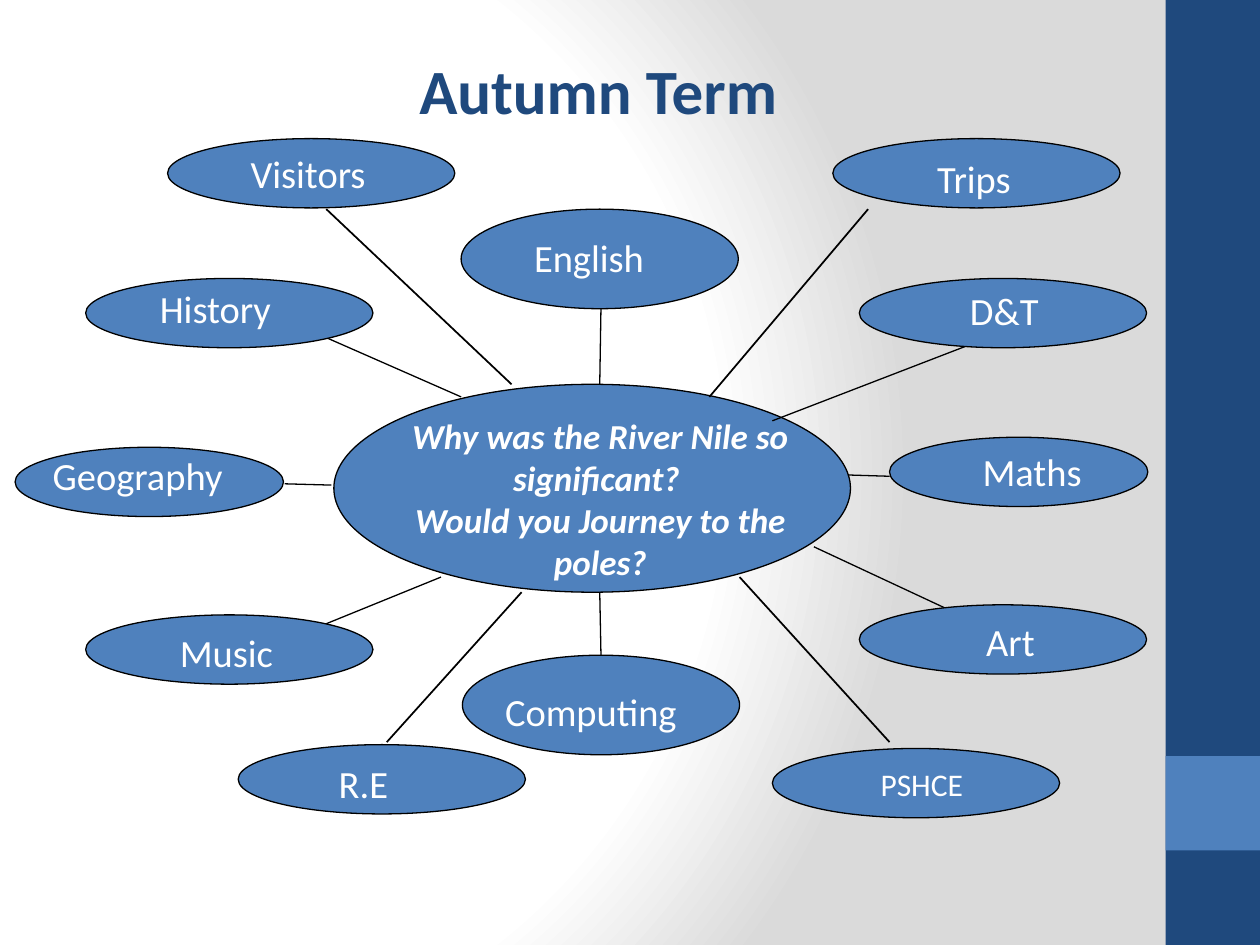
from lxml import etree
from pptx import Presentation
from pptx.dml.color import RGBColor
from pptx.enum.shapes import MSO_CONNECTOR, MSO_SHAPE
from pptx.enum.text import MSO_AUTO_SIZE, PP_ALIGN
from pptx.oxml import parse_xml
from pptx.oxml.ns import nsdecls, qn
from pptx.util import Inches, Pt

OVAL, RECT = MSO_SHAPE.OVAL, MSO_SHAPE.RECTANGLE
STRAIGHT = MSO_CONNECTOR.STRAIGHT
GROW = MSO_AUTO_SIZE.SHAPE_TO_FIT_TEXT
LEFT, MID = PP_ALIGN.LEFT, PP_ALIGN.CENTER

FONT = "Calibri"
COLORS = {"navy": "1F497D", "blue": "4F81BD", "white": "FFFFFF",
          "grey": "DADADA", "black": "000000"}

# Content: boxes are left, top, width, height in inches
TITLE = ["Autumn Term "]
THEME = ["Why was the River Nile so significant? ",
         "Would you Journey to the poles?"]
WIDE = (2.28, 0.55)
TALL = (2.2, 0.79)

# Subject, oval corner, oval size, label box, wrap, alignment, text size
TOPICS = [
    ("Visitors", (1.33, 1.1), WIDE, (1.89, 1.14, 1.12, 0.47), False, LEFT, 22),
    ("Trips", (6.61, 1.1), WIDE, (7.27, 1.18, 0.92, 0.47), True, MID, 22),
    ("English", (3.66, 1.66), TALL, (4.14, 1.81, 1.08, 0.47), False, LEFT, 22),
    ("History", (0.68, 2.21), WIDE, (1.17, 2.21, 1.5, 0.47), True, LEFT, 22),
    ("D&T", (6.82, 2.21), WIDE, (7.6, 2.23, 1.5, 0.47), True, LEFT, 22),
    ("Geography", (0.12, 3.55), (2.13, 0.55), (0.32, 3.54, 1.56, 0.47), False, LEFT, 22),
    ("Maths", (7.06, 3.47), (2.05, 0.55), (7.7, 3.51, 0.99, 0.47), False, LEFT, 22),
    (" Music", (0.68, 4.88), WIDE, (1.26, 4.94, 1.5, 0.47), True, LEFT, 22),
    ("Art", (6.82, 4.8), WIDE, (7.27, 4.86, 1.5, 0.47), True, MID, 22),
    ("Computing", (3.67, 5.2), TALL, (3.91, 5.41, 1.58, 0.47), False, LEFT, 22),
    ("R.E", (1.89, 5.91), WIDE, (2.59, 5.98, 0.6, 0.47), False, LEFT, 22),
    ("PSHCE", (6.13, 5.94), WIDE, (6.89, 6.02, 0.86, 0.4), False, LEFT, 18),
]

# Spokes from the theme to each subject, grouped by line width
SPOKES = {
    0.75: [((3.5, 4.58), (2.59, 4.95)), ((3.66, 3.15), (2.59, 2.68)),
           ((6.13, 3.34), (7.66, 2.75)), ((6.46, 4.34), (7.51, 4.83)),
           ((4.76, 3.05), (4.77, 2.44)), ((4.76, 4.7), (4.77, 5.2)),
           ((2.63, 3.85), (2.26, 3.84)), ((6.73, 3.77), (7.06, 3.78))],
    1: [((5.87, 4.58), (7.06, 5.89)), ((4.14, 4.7), (3.07, 5.89)),
        ((5.63, 3.15), (6.89, 1.66)), ((4.06, 3.05), (2.59, 1.66))],
}

prs = Presentation()
prs.slide_width, prs.slide_height = Inches(10), Inches(7.5)
slide = prs.slides.add_slide(prs.slide_layouts[6])
shapes = slide.shapes


def rgb(name):
    return RGBColor.from_string(COLORS[name])


def backdrop():
    stops = "".join(
        f'<a:gs pos="{pos * 1000}"><a:srgbClr val="{COLORS[name]}"/></a:gs>'
        for pos, name in [(0, "white"), (75, "white"), (100, "grey")])
    slide.element.cSld.insert(0, parse_xml(
        f'<p:bg {nsdecls("p", "a")}><p:bgPr><a:gradFill rotWithShape="1">'
        f'<a:gsLst>{stops}</a:gsLst><a:path path="circle">'
        '<a:fillToRect l="20000" t="50000" r="100000" b="50000"/></a:path>'
        '</a:gradFill><a:effectLst/></p:bgPr></p:bg>'))


def block(kind, box, fill, edge=None):
    shape = shapes.add_shape(kind, *map(Inches, box))
    shape.shadow.inherit = False
    shape.fill.solid()
    shape.fill.fore_color.rgb = rgb(fill)
    if edge:
        shape.line.color.rgb = rgb(edge)
        shape.line.width = Pt(0.75)
    else:
        shape.line.fill.background()


def label(lines, box, size, color="white", align=MID, wrap=True,
          bold=False, italic=False):
    frame = shapes.add_textbox(*map(Inches, box)).text_frame
    frame.word_wrap = wrap
    frame.auto_size = GROW
    for i, line in enumerate(lines):
        para = frame.add_paragraph() if i else frame.paragraphs[0]
        para.alignment = align
        run = para.add_run()
        run.text = line
        font = run.font
        font.name, font.size = FONT, Pt(size)
        font.bold, font.italic = bold, italic
        font.color.rgb = rgb(color)


def spoke(start, end, width):
    line = shapes.add_connector(STRAIGHT, *map(Inches, start + end))
    line.line.color.rgb = rgb("black")
    line.line.width = Pt(width)
    etree.SubElement(line.element.spPr, qn("a:effectLst"))


# Background and side band
backdrop()
block(RECT, (9.25, 0, 0.75, 7.5), "navy")
block(RECT, (9.25, 6, 0.75, 0.75), "blue")

# Title and central theme
label(TITLE, (0.83, 0.36, 7.95, 0.71), 36, "navy", bold=True)
block(OVAL, (2.65, 3.05, 4.1, 1.65), "blue", "black")
label(THEME, (3.03, 3.24, 3.47, 1.45), 20, bold=True, italic=True)

# Spokes, then subjects
for width, ends in SPOKES.items():
    for start, end in ends:
        spoke(start, end, width)
for name, corner, extent, box, wrap, align, size in TOPICS:
    block(OVAL, corner + extent, "blue", "black")
    label([name], box, size, align=align, wrap=wrap)

prs.save("out.pptx")
